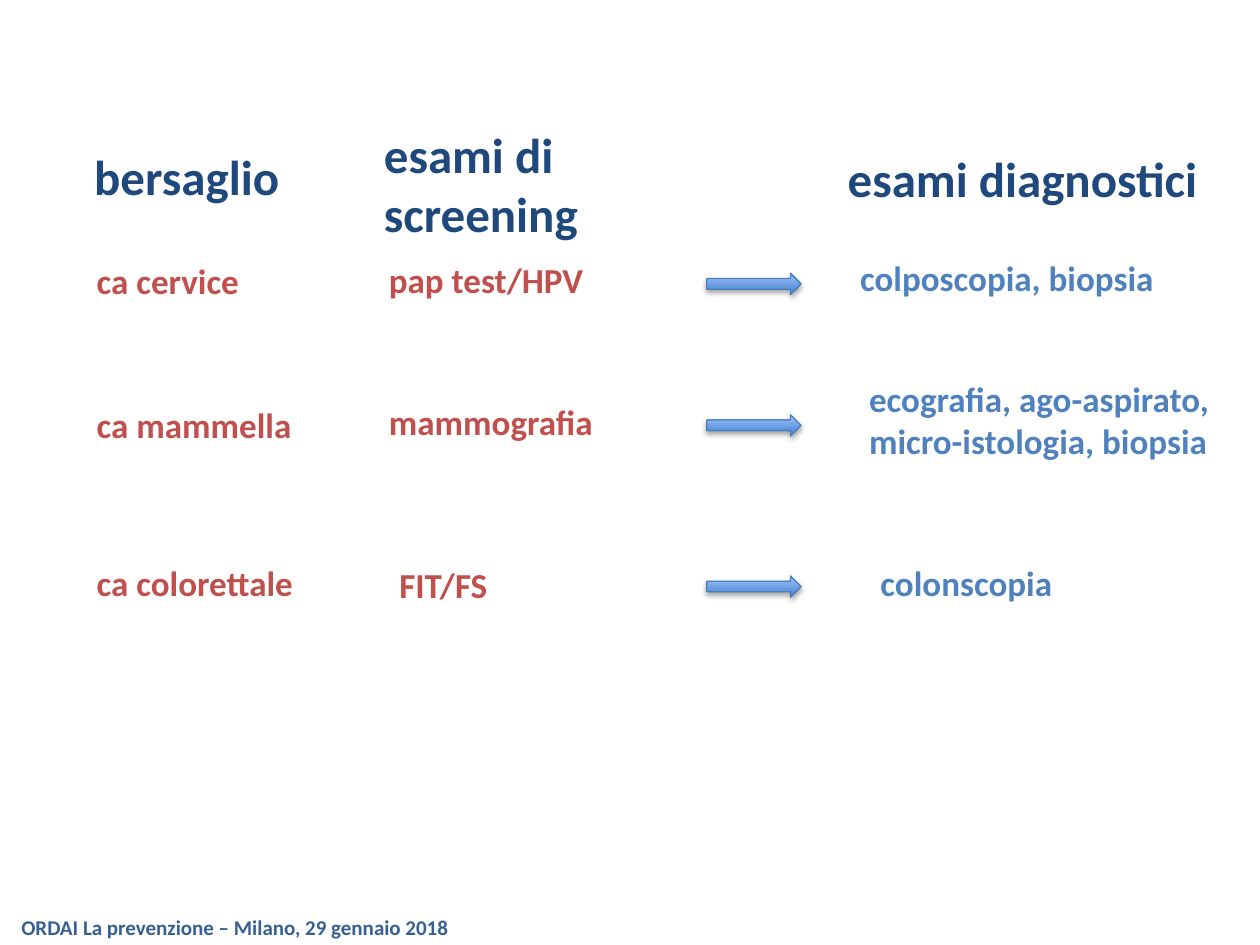
from dataclasses import dataclass

from lxml.etree import SubElement
from pptx import Presentation
from pptx.dml.color import RGBColor
from pptx.enum.shapes import MSO_SHAPE as Shape
from pptx.enum.text import MSO_AUTO_SIZE as AutoSize
from pptx.oxml.ns import qn
from pptx.slide import Slide
from pptx.util import Cm, Pt

NAVY, RED, BLUE, FOOTER_BLUE = "1F497D", "C0504D", "4F81BD", "376092"
ARROW_DARK, ARROW_LIGHT, ARROW_EDGE = "3F80CE", "A4C4FF", "4B7EBC"
HEADING_SIZE, ENTRY_SIZE, FOOTER_SIZE = 28, 20, 12
TARGET_LEFT = 1.7
ARROW_LEFT, ARROW_WIDTH, ARROW_HEIGHT = 14.25, 1.9, 0.43


@dataclass(frozen=True)
class Label:
    """Lines of text with their place in centimetres."""
    lines: tuple[str, ...]
    left: float
    top: float
    width: float
    height: float = 1.12
    wrap: bool = False


@dataclass(frozen=True)
class Pathway:
    target: Label
    screening: Label
    arrow_top: float
    diagnostics: Label


HEADINGS = (
    Label(("bersaglio",), 1.65, 2.82, 4.27, 1.45, wrap=True),
    Label(("esami di", "screening"), 7.49, 2.39, 4.65, 2.64, wrap=True),
    Label(("esami diagnostici",), 16.84, 2.87, 7.65, 1.45),
)
PATHWAYS = (
    Pathway(
        Label(("ca cervice",), TARGET_LEFT, 5.11, 3.4),
        Label(("pap test/HPV",), 7.59, 5.08, 4.5),
        5.51,
        Label(("colposcopia, biopsia",), 17.09, 5.05, 6.48),
    ),
    Pathway(
        Label(("ca mammella",), TARGET_LEFT, 8, 4.47),
        Label(("mammografia",), 7.59, 7.95, 4.67),
        8.36,
        Label(("ecografia, ago-aspirato,", "micro-istologia, biopsia"),
              17.27, 7.49, 7.49, 1.96),
    ),
    Pathway(
        Label(("ca colorettale",), TARGET_LEFT, 11.2, 4.55),
        Label(("FIT/FS",), 7.8, 11.23, 2.36),
        11.61,
        Label(("colonscopia",), 17.5, 11.2, 4.01),
    ),
)
FOOTER = Label(("ORDAI La prevenzione – Milano, 29 gennaio 2018",),
               0.18, 18.31, 9.14, 0.76)


def rgb(value: str) -> RGBColor:
    return RGBColor.from_string(value)


def add_label(slide: Slide, label: Label, size: int, color: str) -> None:
    box = slide.shapes.add_textbox(
        Cm(label.left), Cm(label.top), Cm(label.width), Cm(label.height))
    frame = box.text_frame
    frame.word_wrap = label.wrap
    frame.auto_size = AutoSize.SHAPE_TO_FIT_TEXT
    for index, line in enumerate(label.lines):
        paragraph = frame.add_paragraph() if index else frame.paragraphs[0]
        run = paragraph.add_run()
        run.text = line
        run.font.name = "Calibri"
        run.font.size = Pt(size)
        run.font.bold = True
        run.font.color.rgb = rgb(color)


def add_arrow(slide: Slide, top: float) -> None:
    """Draw a shaded arrow from screening to diagnostics."""
    arrow = slide.shapes.add_shape(
        Shape.RIGHT_ARROW, Cm(ARROW_LEFT), Cm(top), Cm(ARROW_WIDTH), Cm(ARROW_HEIGHT))
    arrow.fill.gradient()
    arrow.fill.gradient_angle = 90
    for stop, color in zip(arrow.fill.gradient_stops, (ARROW_DARK, ARROW_LIGHT)):
        stop.color.rgb = rgb(color)
    arrow.line.color.rgb = rgb(ARROW_EDGE)
    arrow.line.width = Pt(0.75)
    arrow.shadow.inherit = False
    effects = arrow.element.spPr.find(qn("a:effectLst"))
    shadow = SubElement(effects, qn("a:outerShdw"), blurRad=str(Pt(3.1)),
                        dist=str(Pt(1.8)), dir="5400000", rotWithShape="0")
    shade = SubElement(shadow, qn("a:srgbClr"), val="000000")
    SubElement(shade, qn("a:alpha"), val="35000")


def main() -> None:
    deck = Presentation()
    deck.slide_width, deck.slide_height = Cm(25.4), Cm(19.05)
    slide = deck.slides.add_slide(deck.slide_layouts[6])
    for heading in HEADINGS:
        add_label(slide, heading, HEADING_SIZE, NAVY)
    for pathway in PATHWAYS:
        add_label(slide, pathway.target, ENTRY_SIZE, RED)
        add_label(slide, pathway.screening, ENTRY_SIZE, RED)
        add_arrow(slide, pathway.arrow_top)
        add_label(slide, pathway.diagnostics, ENTRY_SIZE, BLUE)
    add_label(slide, FOOTER, FOOTER_SIZE, FOOTER_BLUE)
    deck.save("out.pptx")


if __name__ == "__main__":
    main()
